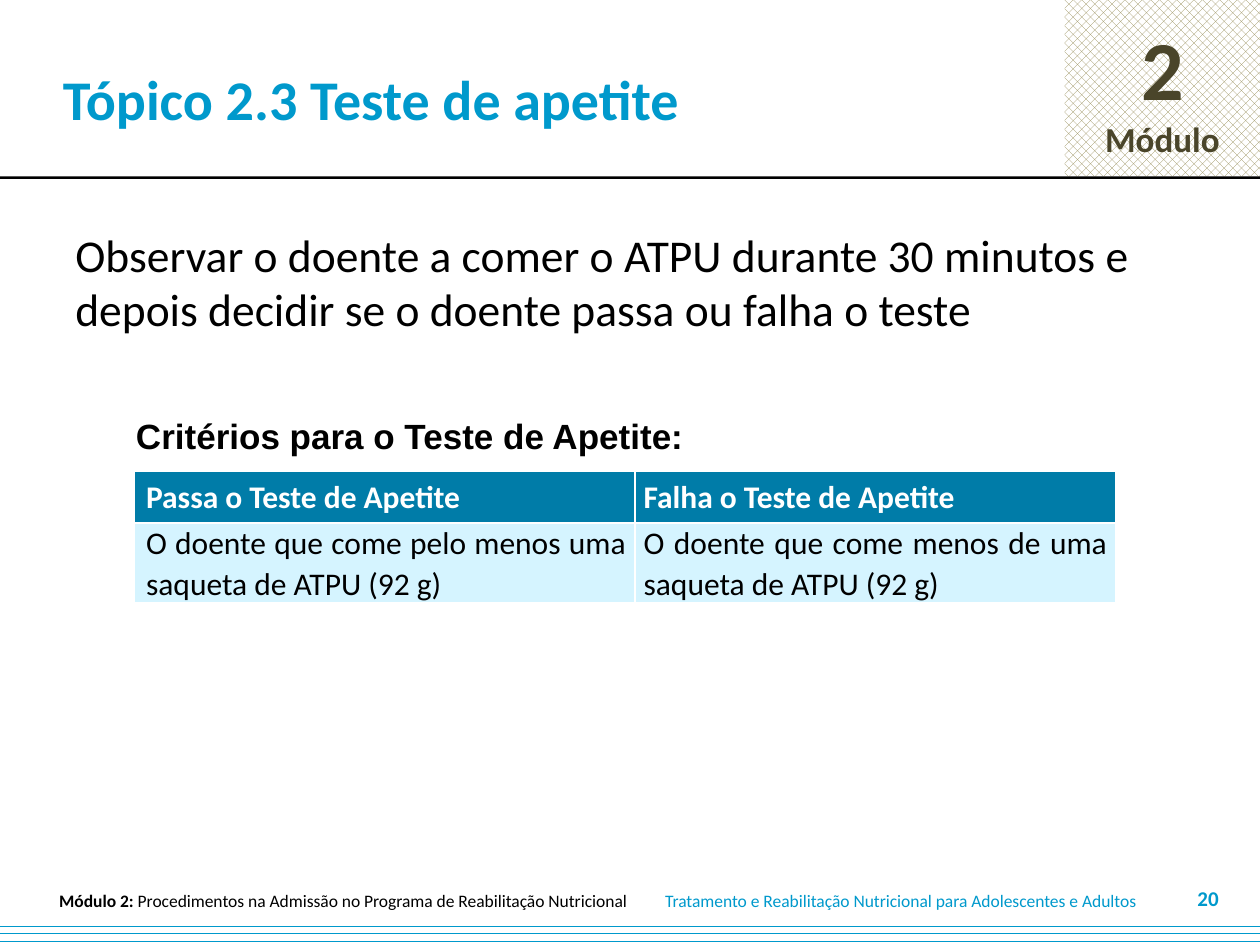
from lxml import etree
from pptx import Presentation
from pptx.dml.color import RGBColor
from pptx.enum import dml, shapes, text
from pptx.oxml import ns
from pptx.util import Pt

COLORS = {"blue": "0099CC", "header": "007CA8", "row": "D5F4FF", "khaki": "948A54",
          "olive": "4A452A", "black": "000000", "white": "FFFFFF"}
ALIGN, ANCHOR = text.PP_ALIGN, text.MSO_ANCHOR
CRITERIA = [["Passa o Teste de Apetite", "Falha o Teste de Apetite"],
            ["O doente que come pelo menos uma saqueta de ATPU (92 g)",
             "O doente que come menos de uma saqueta de ATPU (92 g)"]]


def rgb(name):
    """Return the named colour."""
    return RGBColor.from_string(COLORS[name])


def apply(target, formats):
    """Set each attribute of the target from a dict."""
    for name, value in formats.items():
        setattr(target, name, value)


def write(paragraph, words, size, color, bold=False, font="Calibri", **formats):
    """Add a styled run to a paragraph and format the paragraph."""
    run = paragraph.add_run()
    run.text = words
    apply(run.font, {"size": Pt(size), "bold": bold, "name": font})
    run.font.color.rgb = rgb(color)
    apply(paragraph, formats)


def add_label(slide, box, anchor=ANCHOR.MIDDLE, wrap=True, **margins):
    """Add a text box and return its first paragraph."""
    frame = slide.shapes.add_textbox(*map(Pt, box)).text_frame
    apply(frame, {"word_wrap": wrap, "vertical_anchor": anchor, **margins})
    return frame.paragraphs[0]


def add_panel(slide, box, color, pattern=None):
    """Add a borderless rectangle with a solid or patterned fill."""
    panel = slide.shapes.add_shape(shapes.MSO_SHAPE.RECTANGLE, *map(Pt, box))
    panel.shadow.inherit = False
    panel.line.fill.background()
    if pattern is None:
        panel.fill.solid()
        panel.fill.fore_color.rgb = rgb(color)
    else:
        panel.fill.patterned()
        panel.fill.pattern = pattern
        panel.fill.fore_color.rgb = rgb(color)
        panel.fill.back_color.rgb = rgb("white")
    return panel


def add_header(slide, left, top, width, height):
    """Place the title, the module badge and the rule below them."""
    badge_width = 111.6
    badge = add_panel(slide, (left + width - badge_width, top, badge_width, height),
                      "khaki", dml.MSO_PATTERN.PERCENT_50)
    frame = badge.text_frame
    frame.vertical_anchor = ANCHOR.MIDDLE
    write(frame.paragraphs[0], "2", 48, "olive", True, alignment=ALIGN.CENTER)
    write(frame.add_paragraph(), "Módulo", 20, "olive", True, alignment=ALIGN.CENTER)
    add_panel(slide, (left, top + height, width, 1.5), "black")
    title = add_label(slide, (left, top, 618, height + 10.8), margin_left=Pt(36))
    write(title, "Tópico 2.3 Teste de apetite", 32, "blue", True)


def add_body(slide, left, top, width, height):
    """Place the instruction, the table heading and the criteria table."""
    instruction = add_label(slide, (left, top, width, height), ANCHOR.TOP)
    write(instruction, "Observar o doente a comer o ATPU durante 30 minutos e depois "
          "decidir se o doente passa ou falha o teste", 26, "black", space_after=Pt(10))
    heading = add_label(slide, (left + 34.6, top + 107.3, 330.5, 31.7), wrap=False)
    write(heading, "Critérios para o Teste de Apetite:", 20, "black", True, "Arial",
          alignment=ALIGN.JUSTIFY)
    add_criteria(slide, left + 41, top + 143.3, (285.8, 275), (29.5, 45))


def add_criteria(slide, left, top, widths, heights):
    """Place the two-column table of pass and fail criteria."""
    table = slide.shapes.add_table(len(heights), len(widths), Pt(left), Pt(top),
                                   Pt(sum(widths)), Pt(sum(heights))).table
    for column, width in zip(table.columns, widths):
        column.width = Pt(width)
    for r, (row, height) in enumerate(zip(table.rows, heights)):
        row.height = Pt(height)
        for c, cell in enumerate(row.cells):
            apply(cell, {"margin_left": Pt(5 if c else 6.5), "margin_right": Pt(5),
                         "margin_top": 0, "margin_bottom": 0,
                         "vertical_anchor": ANCHOR.MIDDLE})
            color, fill = ("black", "row") if r else ("white", "header")
            write(cell.text_frame.paragraphs[0], CRITERIA[r][c], 18, color, not r,
                  alignment=ALIGN.JUSTIFY, line_spacing=1.05)
            cell.fill.solid()
            cell.fill.fore_color.rgb = rgb(fill)
            sides = ("lnL" if c else "lnR", "lnT" if r else "lnB")
            for position, side in enumerate(sides):
                add_border(cell, side, position)


def add_border(cell, side, position):
    """Draw a white border on one side of a cell."""
    border = etree.Element(ns.qn(f"a:{side}"), w=str(Pt(1)))
    fill = etree.SubElement(border, ns.qn("a:solidFill"))
    etree.SubElement(fill, ns.qn("a:srgbClr"), val=COLORS["white"])
    cell._tc.get_or_add_tcPr().insert(position, border)


def add_footer(slide, left, top, width, height):
    """Place the module name, course name, page number and striped band."""
    band = 15.1
    add_panel(slide, (left, top + height - band, width, band), "blue",
              dml.MSO_PATTERN.DASHED_HORIZONTAL)
    course = add_label(slide, (left + 373, top + 3.6, 291.6, 14.4), wrap=False)
    write(course, "Tratamento e Reabilitação Nutricional para Adolescentes e Adultos",
          10, "blue")
    module = add_label(slide, (left + 21, top + 3.6, 350, 14.4), wrap=False)
    write(module, "Módulo 2: ", 10, "black", True, alignment=ALIGN.CENTER)
    write(module, "Procedimentos na Admissão no Programa de Reabilitação Nutricional",
          10, "black")
    page = add_label(slide, (left + 667.5, top, 36, 18))
    write(page, "20", 12, "blue", True, alignment=ALIGN.RIGHT)


def main():
    """Build and save the slide."""
    deck = Presentation()
    apply(deck, {"slide_width": Pt(720), "slide_height": Pt(540)})
    slide = deck.slides.add_slide(deck.slide_layouts[6])
    add_header(slide, 0, 0, 720, 100.8)
    add_body(slide, 36, 126, 648, 356.4)
    add_footer(slide, 0, 504, 720, 36)
    deck.save("out.pptx")


if __name__ == "__main__":
    main()
